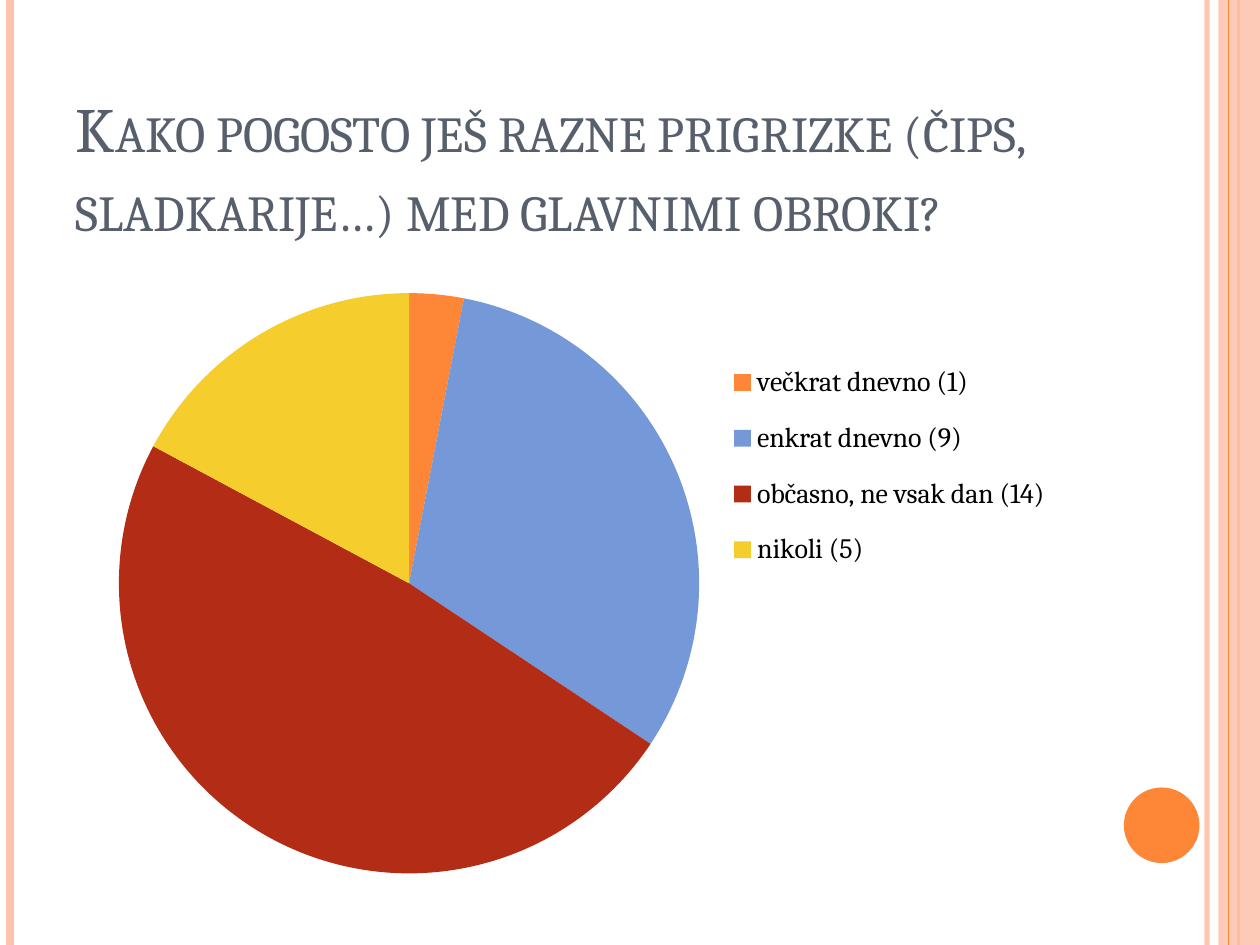
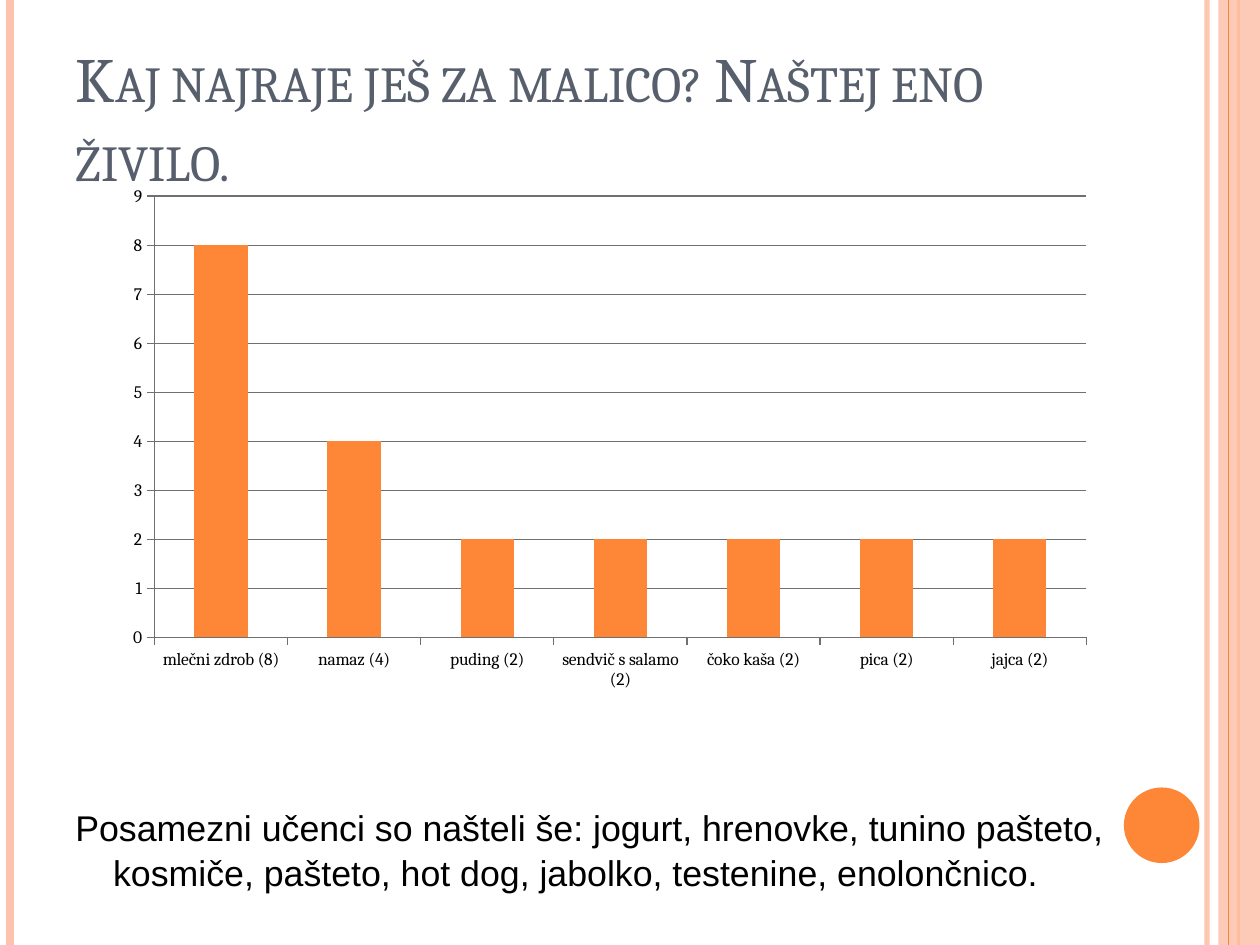
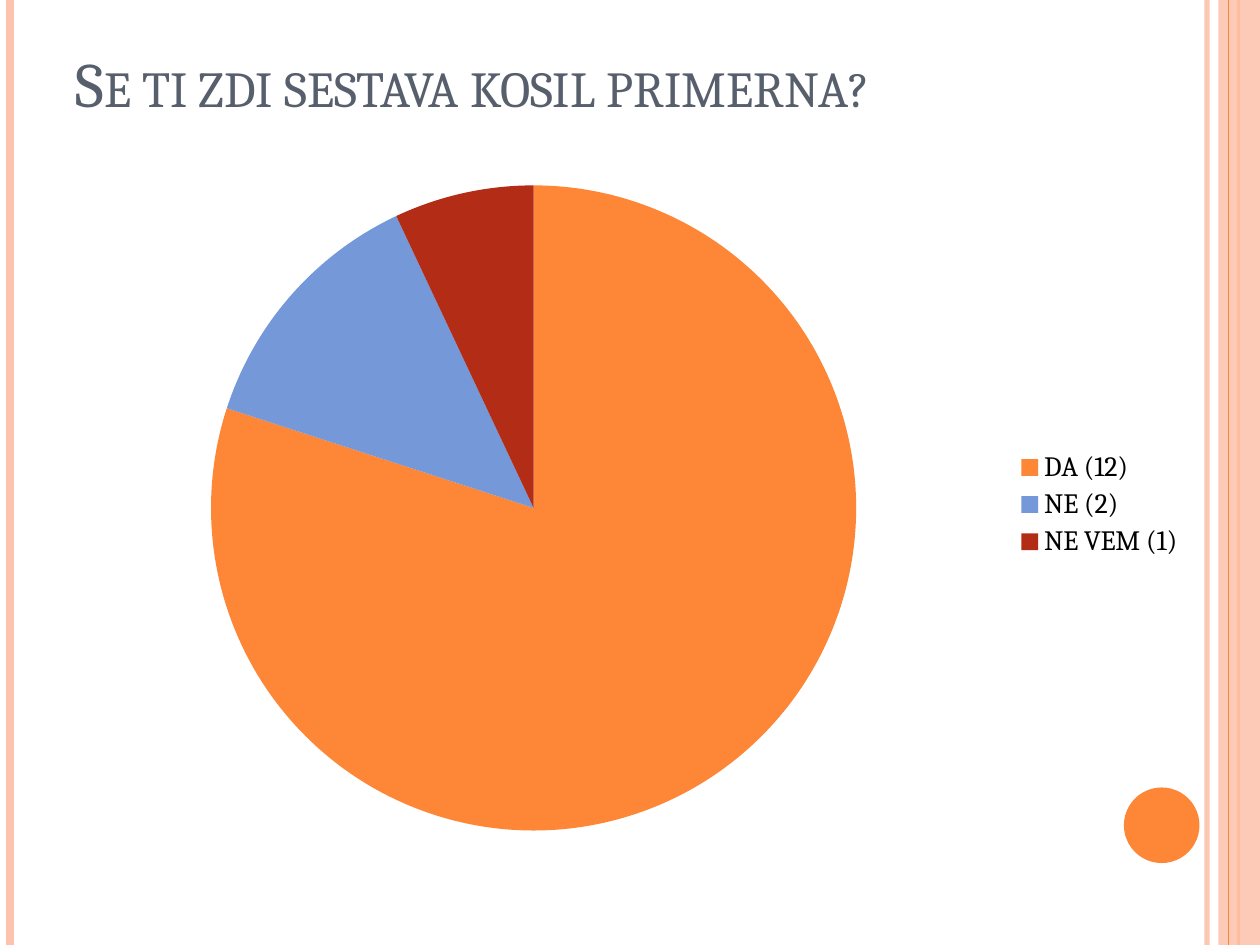
from lxml.etree import SubElement
from pptx import Presentation
from pptx.chart.data import CategoryChartData
from pptx.dml.color import RGBColor
from pptx.enum.chart import XL_CHART_TYPE as CT, XL_LEGEND_POSITION as LP, XL_TICK_MARK as TM
from pptx.enum.shapes import MSO_CONNECTOR as MC, MSO_SHAPE as MS
from pptx.enum.text import MSO_ANCHOR as MA, MSO_AUTO_SIZE as AS, PP_ALIGN as PA
from pptx.oxml.ns import qn
from pptx.util import Inches, Pt

ORANGE, PEACH, SLATE, BLACK, GRAY = "FE8637", "FEC3AE", "575F6D", "000000", "707070"
PIE_COLORS = [ORANGE, "7598D9", "B32C16", "F5CD2D"]
SERIF, SANS = "Cambria", "Arial"
LINES_BEHIND = [(9.58, PEACH, 3, 93), (0.08, PEACH, 4.5, 100), (9.83, ORANGE, 1.5, 100)]
LINES_FRONT = [(9.75, ORANGE, 0.75, 100)]

SLIDES = [
    dict(
        title="Kako pogosto ješ razne prigrizke (čips, sladkarije…) med glavnimi obroki?",
        title_box=(0.5, 0.3, 9, 2.11), title_inset=0.47,
        kind=CT.PIE, chart_box=(0.5, 2.18, 8.2, 4.9),
        plot=(0.05, 0.03, 0.57, 0.94), legend=(0.64, 0.11, 0.32, 0.4),
        data=[("večkrat dnevno (1)", 3), ("enkrat dnevno (9)", 31),
              ("občasno, ne vsak dan (14)", 48), ("nikoli (5)", 17)],
    ),
    dict(
        title="Kaj najraje ješ za malico? Naštej eno živilo.",
        title_box=(0.5, 0.3, 8.17, 1.72), title_inset=0.48,
        kind=CT.COLUMN_CLUSTERED, chart_box=(0.91, 1.39, 7.87, 4.17),
        plot=(0.04, 0.04, 0.94, 0.84),
        data=[("mlečni zdrob (8)", 8), ("namaz (4)", 4), ("puding (2)", 2),
              ("sendvič s salamo (2)", 2), ("čoko kaša (2)", 2), ("pica (2)", 2), ("jajca (2)", 2)],
        note="Posamezni učenci so našteli še: jogurt, hrenovke, tunino pašteto, "
             "kosmiče, pašteto, hot dog, jabolko, testenine, enolončnico.",
        note_box=(0.5, 6.33, 9, 0.8),
    ),
    dict(
        title="Se ti zdi sestava kosil primerna?",
        title_box=(0.5, 0.3, 8.59, 1.24), title_inset=0.59,
        kind=CT.PIE, chart_box=(0.5, 1.31, 9, 5.39),
        plot=(0.13, 0.03, 0.57, 0.95), legend=None,
        data=[("DA (12)", 80), ("NE (2)", 13), ("NE VEM (1)", 7)],
    ),
]


def rgb(color):
    """Turn a hex string into a colour."""
    return RGBColor.from_string(color)


def box(values):
    """Turn inches into lengths."""
    return [Inches(v) for v in values]


def set_alpha(shape, percent):
    """Make the shape's own colours partly transparent."""
    if percent < 100:
        for color in shape.element.iter(qn("a:srgbClr")):
            SubElement(color, qn("a:alpha"), val=str(percent * 1000))


def write(shape, text, size, font, color, anchor=MA.TOP, bottom=0.05, hang=0, small=False):
    """Fill a shape with one formatted paragraph."""
    tf = shape.text_frame
    tf.word_wrap, tf.auto_size, tf.vertical_anchor = True, AS.NONE, anchor
    tf.margin_left = tf.margin_right = Inches(0.1)
    tf.margin_top, tf.margin_bottom = Inches(0.05), Inches(bottom)
    p = tf.paragraphs[0]
    p.alignment, p.line_spacing = PA.LEFT, 1.05
    if hang:
        pPr = p._p.get_or_add_pPr()
        pPr.set("marL", str(Inches(hang)))
        pPr.set("indent", str(-Inches(hang)))
    r = p.add_run()
    r.text = text
    r.font.size, r.font.name, r.font.color.rgb = Pt(size), font, rgb(color)
    if small:
        r.font._element.set("cap", "small")


def add_bars(s, bars):
    """Draw full-height vertical lines."""
    for x, color, width, alpha in bars:
        line = s.shapes.add_connector(MC.STRAIGHT, *box((x, 0, x, 7.5)))
        line.line.color.rgb, line.line.width = rgb(color), Pt(width)
        SubElement(line.element.spPr, qn("a:effectLst"))
        set_alpha(line, alpha)
        yield line


def add_solid(s, kind, place, color, alpha=100):
    """Draw a filled shape without an outline."""
    sp = s.shapes.add_shape(kind, *box(place))
    sp.shadow.inherit = False
    sp.fill.solid()
    sp.fill.fore_color.rgb = rgb(color)
    sp.line.fill.background()
    set_alpha(sp, alpha)
    return sp


def decorate(layout, s):
    """Put the shared bands and the dot on the layout."""
    shapes = [*add_bars(s, LINES_BEHIND),
              add_solid(s, MS.RECTANGLE, (9.67, 0, 0.33, 7.5), PEACH, 87),
              *add_bars(s, LINES_FRONT),
              add_solid(s, MS.OVAL, (8.92, 6.25, 0.6, 0.6), ORANGE)]
    for shape in shapes:
        layout.shapes.element.append(shape.element)


def place_part(part, index, values, inner=False):
    """Give a chart part a fixed place as fractions of the chart."""
    for old in part.findall(qn("c:layout")):
        part.remove(old)
    layout = part.makeelement(qn("c:layout"), {})
    part.insert(index, layout)
    manual = SubElement(layout, qn("c:manualLayout"))
    if inner:
        SubElement(manual, qn("c:layoutTarget"), val="inner")
    for name in ("xMode", "yMode"):
        SubElement(manual, qn("c:" + name), val="edge")
    for name, value in zip("xywh", values):
        SubElement(manual, qn("c:" + name), val=str(value))


def format_pie(chart, legend_place):
    """Colour the slices and set up the legend."""
    series = chart.plots[0].series[0]
    for i, _ in enumerate(series.values):
        fill = series.points[i].format.fill
        fill.solid()
        fill.fore_color.rgb = rgb(PIE_COLORS[i])
    chart.has_legend = True
    legend = chart.legend
    legend.position, legend.include_in_layout = LP.RIGHT, False
    legend.font.size, legend.font.name = Pt(16), SERIF
    legend.font.color.rgb = rgb(BLACK)
    if legend_place:
        place_part(legend._element, 1, legend_place)


def format_columns(chart):
    """Colour the columns and set up the axes."""
    plot = chart.plots[0]
    plot.vary_by_categories, plot.gap_width = False, 150
    fill = plot.series[0].format.fill
    fill.solid()
    fill.fore_color.rgb = rgb(ORANGE)
    chart.has_legend = False
    axis = chart.value_axis
    axis.minimum_scale, axis.maximum_scale, axis.major_unit = 0, 9, 1
    axis.has_major_gridlines = True
    for part in (axis, chart.category_axis, axis.major_gridlines):
        part.format.line.color.rgb, part.format.line.width = rgb(GRAY), Pt(0.75)
    for part in (axis, chart.category_axis):
        part.major_tick_mark = TM.OUTSIDE


def add_survey_chart(s, item):
    """Add the chart with the answers."""
    data = CategoryChartData()
    data.categories = [name for name, _ in item["data"]]
    data.add_series("Series 1", [value for _, value in item["data"]])
    chart = s.shapes.add_chart(item["kind"], *box(item["chart_box"]), data).chart
    chart.has_title = False
    chart.font.size, chart.font.name, chart.font.color.rgb = Pt(10), SERIF, rgb(BLACK)
    if item["kind"] == CT.PIE:
        format_pie(chart, item["legend"])
    else:
        format_columns(chart)
    place_part(chart._chartSpace.chart.plotArea, 0, item["plot"], inner=True)


def main():
    """Build the presentation."""
    prs = Presentation()
    prs.slide_width, prs.slide_height = Inches(10), Inches(7.5)
    layout = prs.slide_layouts[5]
    for i, item in enumerate(SLIDES):
        s = prs.slides.add_slide(layout)
        if i == 0:
            decorate(layout, s)
        title = s.shapes.title
        title.left, title.top, title.width, title.height = box(item["title_box"])
        write(title, item["title"], 36, SERIF, SLATE, anchor=MA.BOTTOM,
              bottom=item["title_inset"], small=True)
        if "note" in item:
            note = s.shapes.add_textbox(*box(item["note_box"]))
            write(note, item["note"], 20.4, SANS, BLACK, hang=0.3)
        add_survey_chart(s, item)
    prs.save("out.pptx")


if __name__ == "__main__":
    main()
